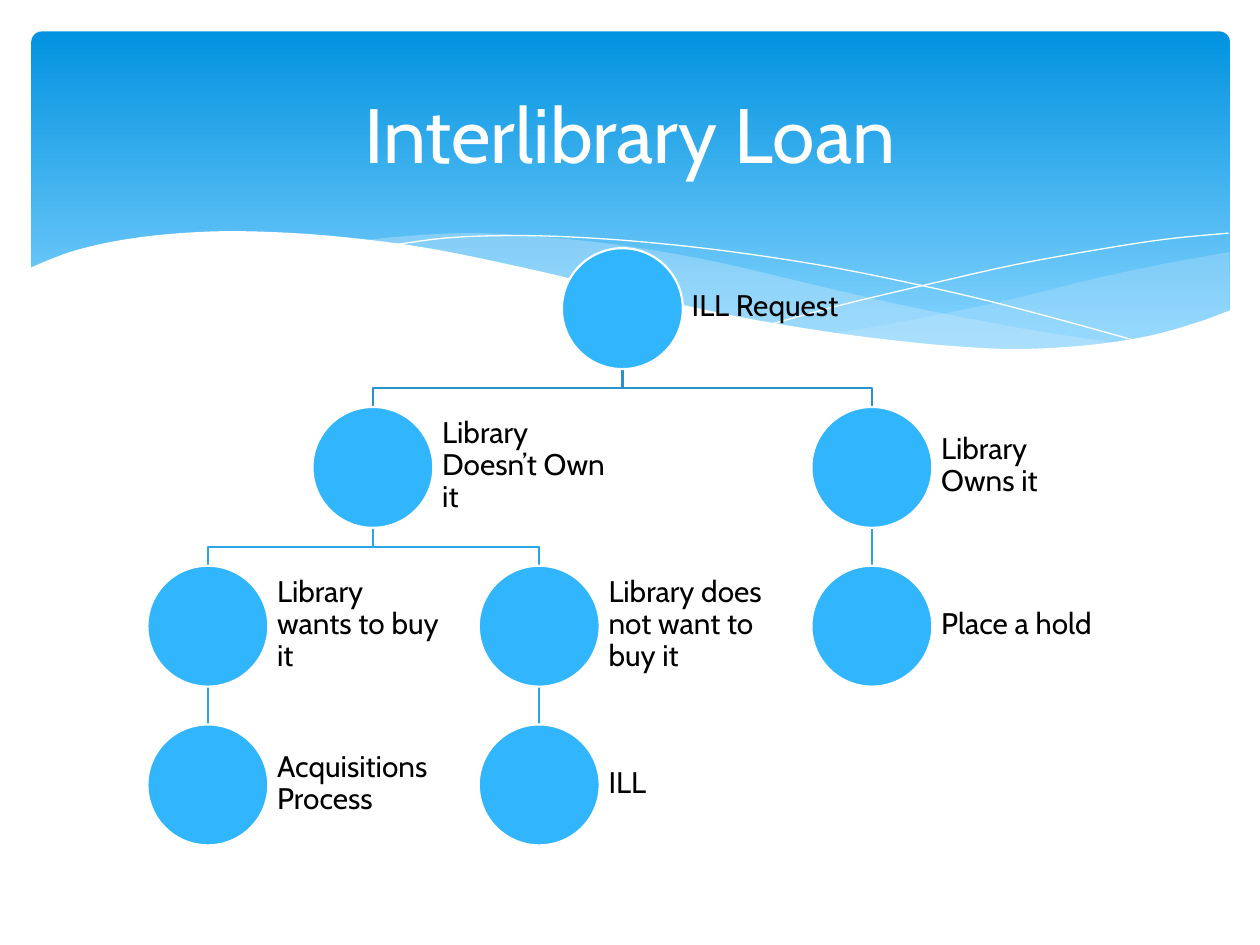
from dataclasses import dataclass

import lxml.etree
import pptx
import pptx.dml.color
import pptx.enum.shapes
import pptx.enum.text
import pptx.oxml.ns
import pptx.util

SCALE = 9144  # EMU per px, 100 px to the inch
FONT = "Cabin"
COLORS = {
    "band_top": "0293E0",
    "band_bottom": "83D3FE",
    "ripple": "C6E7FC",
    "node": "31B6FD",
    "top_link": "2792CB",
    "link": "2CA5E6",
    "white": "FFFFFF",
    "text": "000000",
}

# Tree layout
CIRCLE = 96
FIRST_TOP, LEVEL_PITCH = 197, 126
LEAF_CENTERS = (165, 428, 692)
LABEL_WIDTH, LABEL_INSET = 144, 7

Point = tuple[float, float]


@dataclass(frozen=True)
class Node:
    label: str
    level: int
    leaves: tuple[int, int]  # first and last leaf column
    children: tuple["Node", ...] = ()

    @property
    def center(self) -> int:
        if self.children:
            return (self.children[0].center + self.children[-1].center) // 2
        return LEAF_CENTERS[self.leaves[0]]

    @property
    def top(self) -> int:
        return FIRST_TOP + self.level * LEVEL_PITCH


@dataclass(frozen=True)
class Ripple:
    upper: list[Point]
    lower: list[Point]
    color: str
    alpha: int = 100


TREE = Node("ILL Request", 0, (0, 2), (
    Node("Library Doesn’t Own it", 1, (0, 1), (
        Node("Library wants to buy it", 2, (0, 0),
             (Node("Acquisitions Process", 3, (0, 0)),)),
        Node("Library does not want to buy it", 2, (1, 1),
             (Node("ILL", 3, (1, 1)),)),
    )),
    Node("Library Owns it", 1, (2, 2), (Node("Place a hold", 2, (2, 2)),)),
))

BACK_RIPPLES = [
    Ripple([(661, 265), (729, 253), (805, 237), (861, 223), (921, 210), (976, 200)],
           [(976, 247), (935, 262), (881, 273), (814, 278), (745, 275), (661, 265)],
           "ripple", 29),
    Ripple([(286, 191), (328, 187), (380, 185), (442, 189), (502, 196), (569, 208),
            (629, 222), (706, 240), (775, 254), (837, 265), (893, 273)],
           [(893, 273), (838, 278), (773, 277), (709, 272), (634, 261), (566, 248),
            (491, 232), (427, 216), (362, 203), (286, 191)],
           "ripple", 40),
]
CRESTS = [
    [(309, 195), (353, 189), (401, 187), (450, 188), (510, 192), (582, 200),
     (665, 213), (760, 233), (831, 251), (907, 272)],
    [(613, 257), (672, 241), (748, 223), (806, 210), (866, 199), (924, 190), (975, 185)],
]
FRONT_RIPPLE = Ripple(
    [(23, 213), (59, 199), (106, 189), (161, 184), (211, 184), (271, 188), (340, 197),
     (418, 213), (503, 233), (579, 250), (648, 262), (708, 270), (761, 275), (809, 277),
     (863, 274), (910, 267), (950, 256), (977, 246)],
    [(977, 329), (23, 329)], "white")


def px(length: float) -> int:
    return round(length * SCALE)


def rgb(name: str) -> pptx.dml.color.RGBColor:
    return pptx.dml.color.RGBColor.from_string(COLORS[name])


def smooth(points: list[Point], steps: int = 6) -> list[Point]:
    """Catmull-Rom curve through the points."""
    if len(points) < 3:
        return points
    padded = [points[0], *points, points[-1]]
    curve = []
    for a, b, c, d in zip(padded, padded[1:], padded[2:], padded[3:]):
        for step in range(steps):
            t = step / steps
            curve.append(tuple(
                q + t / 2 * (r - p + t * (2 * p - 5 * q + 4 * r - s
                                          + t * (3 * q - p - 3 * r + s)))
                for p, q, r, s in zip(a, b, c, d)))
    return curve + [points[-1]]


def add_path(slide, points: list[Point], close: bool):
    corners = [(px(x), px(y)) for x, y in points]
    builder = slide.shapes.build_freeform(*corners[0])
    builder.add_line_segments(corners[1:], close=close)
    shape = builder.convert_to_shape()
    shape.shadow.inherit = False
    if not close:
        shape.fill.background()
    return shape


def set_line(shape, color: str, width: float) -> None:
    shape.line.color.rgb = rgb(color)
    shape.line.width = pptx.util.Pt(width)


def add_ripple(slide, ripple: Ripple) -> None:
    shape = add_path(slide, smooth(ripple.upper) + smooth(ripple.lower), True)
    shape.fill.solid()
    shape.fill.fore_color.rgb = rgb(ripple.color)
    shape.line.fill.background()
    if ripple.alpha < 100:
        color = shape.element.spPr.find(".//" + pptx.oxml.ns.qn("a:srgbClr"))
        lxml.etree.SubElement(color, pptx.oxml.ns.qn("a:alpha"),
                              val=str(ripple.alpha * 1000))


def add_header(slide) -> None:
    band = slide.shapes.add_shape(pptx.enum.shapes.MSO_SHAPE.ROUNDED_RECTANGLE,
                                  px(25), px(25), px(951), px(270))
    band.adjustments[0] = 0.03
    band.shadow.inherit = False
    band.line.fill.background()
    band.fill.gradient()
    band.fill.gradient_angle = 270
    stops = (("band_top", 0), ("band_bottom", 0.9))
    for stop, (color, position) in zip(band.fill.gradient_stops, stops):
        stop.color.rgb = rgb(color)
        stop.position = position
    for ripple in BACK_RIPPLES:
        add_ripple(slide, ripple)
    for crest in CRESTS:
        set_line(add_path(slide, smooth(crest), False), "white", 0)
    add_ripple(slide, FRONT_RIPPLE)


def add_title(slide, text: str) -> None:
    title = slide.shapes.title
    title.left, title.top, title.width, title.height = map(px, (50, 37, 900, 137))
    title.text_frame.text = text
    title.text_frame.vertical_anchor = pptx.enum.text.MSO_ANCHOR.MIDDLE
    paragraph = title.text_frame.paragraphs[0]
    paragraph.alignment = pptx.enum.text.PP_ALIGN.CENTER
    set_font(paragraph, 44, "white")
    title.element.getparent().append(title.element)  # in front of the header


def set_font(paragraph, size: int, color: str) -> None:
    paragraph.font.name = FONT
    paragraph.font.size = pptx.util.Pt(size)
    paragraph.font.color.rgb = rgb(color)


def add_links(slide, node: Node) -> None:
    start = node.top + CIRCLE - 1
    for child in node.children:
        if child.center == node.center:
            link = slide.shapes.add_connector(
                pptx.enum.shapes.MSO_CONNECTOR.STRAIGHT,
                px(node.center), px(start), px(child.center), px(child.top))
            lxml.etree.SubElement(link.element.spPr, pptx.oxml.ns.qn("a:effectLst"))
        else:
            bend = start + 16
            link = add_path(slide, [(node.center, start), (node.center, bend),
                                    (child.center, bend), (child.center, child.top)], False)
        set_line(link, "link" if node.level else "top_link", 1.25)
        add_links(slide, child)


def add_nodes(slide, node: Node) -> None:
    circle = slide.shapes.add_shape(
        pptx.enum.shapes.MSO_SHAPE.OVAL,
        px(node.center - CIRCLE / 2), px(node.top), px(CIRCLE), px(CIRCLE))
    circle.shadow.inherit = False
    circle.fill.solid()
    circle.fill.fore_color.rgb = rgb("node")
    set_line(circle, "white", 1.25)

    label = slide.shapes.add_textbox(px(node.center + CIRCLE / 2), px(node.top - 1),
                                     px(LABEL_WIDTH), px(CIRCLE))
    frame = label.text_frame
    frame.word_wrap = True
    frame.vertical_anchor = pptx.enum.text.MSO_ANCHOR.MIDDLE
    frame.margin_left = frame.margin_right = px(LABEL_INSET)
    frame.margin_top = frame.margin_bottom = px(LABEL_INSET)
    frame.text = node.label
    frame.paragraphs[0].line_spacing = 0.9
    set_font(frame.paragraphs[0], 17, "text")
    for child in node.children:
        add_nodes(slide, child)


def main() -> None:
    presentation = pptx.Presentation()
    presentation.slide_width, presentation.slide_height = px(1000), px(750)
    slide = presentation.slides.add_slide(presentation.slide_layouts[5])
    add_header(slide)
    add_title(slide, "Interlibrary Loan")
    add_links(slide, TREE)
    add_nodes(slide, TREE)
    presentation.save("out.pptx")


if __name__ == "__main__":
    main()
